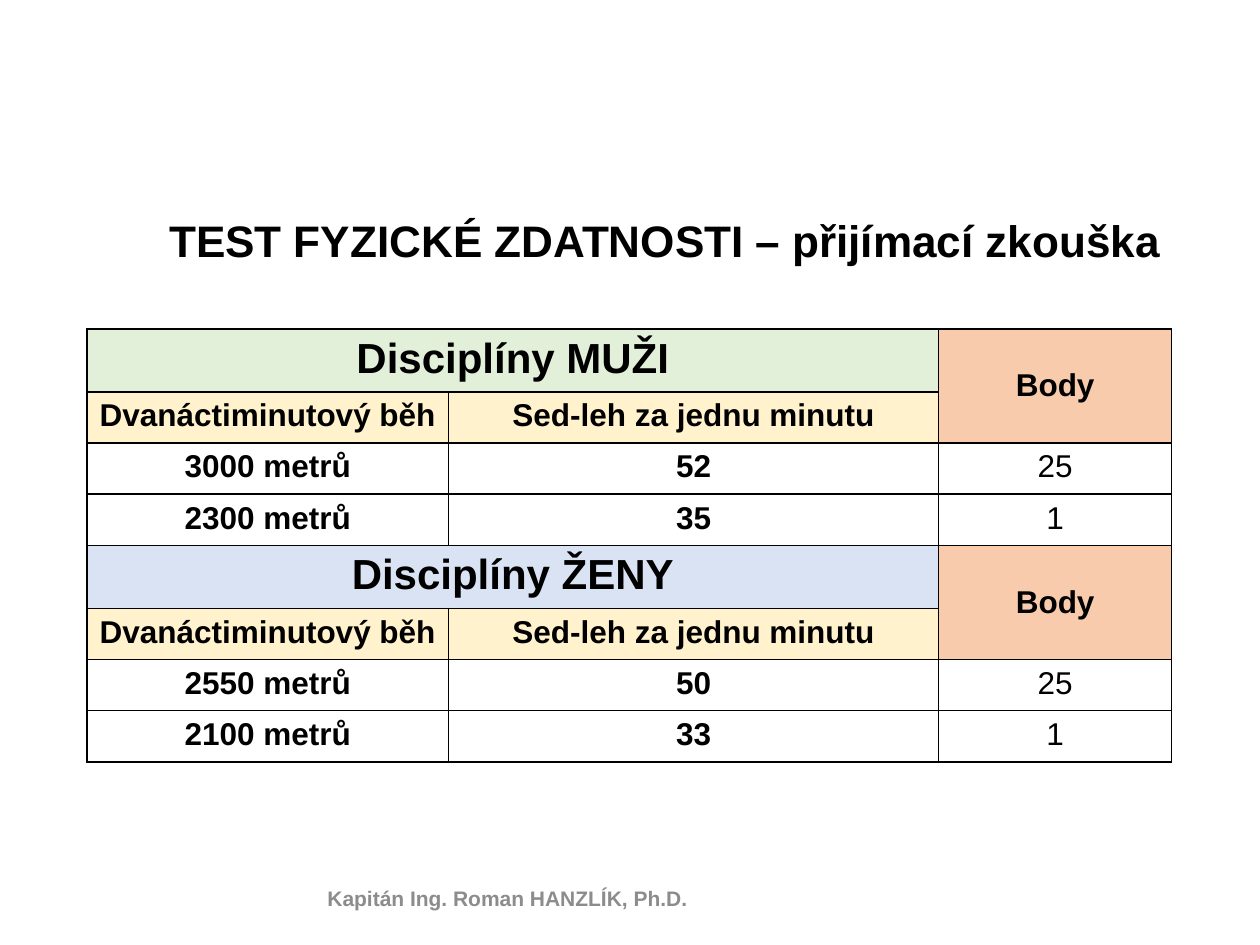
from dataclasses import dataclass

from lxml import etree
from pptx import Presentation
from pptx.dml.color import RGBColor
from pptx.enum import text
from pptx.oxml import ns
from pptx.util import Inches, Pt

WIDTH, HEIGHT = 10, 7.5
COLUMNS = (2.87, 3.89, 1.85)
ROW_HEIGHT = 3.25 / 8
BLACK, GREY, WHITE = "000000", "8C8C8C", "FFFFFF"
ORANGE, YELLOW, GREEN, BLUE = "F8CBAD", "FFF2CC", "E2F0D9", "DAE3F3"


@dataclass
class Label:
    wording: str
    left: float
    top: float
    width: float
    height: float
    size: float
    color: str
    align: text.PP_ALIGN


@dataclass
class Group:
    heading: str
    fill: str
    results: tuple


LABELS = (
    Label("TEST FYZICKÉ ZDATNOSTI – přijímací zkouška", 0.69, 1.46, 8.62, 0.88,
          25.2, BLACK, text.PP_ALIGN.RIGHT),
    Label("Kapitán Ing. Roman HANZLÍK, Ph.D.", 2.5, 6.93, 3.38, 0.4,
          12, GREY, text.PP_ALIGN.LEFT),
)
GROUPS = (
    Group("Disciplíny MUŽI", GREEN,
          (("3000 metrů", "52", "25"), ("2300 metrů", "35", "1"))),
    Group("Disciplíny ŽENY", BLUE,
          (("2550 metrů", "50", "25"), ("2100 metrů", "33", "1"))),
)
DISCIPLINES = ("Dvanáctiminutový běh", "Sed-leh za jednu minutu")


def rgb(color: str) -> RGBColor:
    return RGBColor.from_string(color)


def write(frame, wording: str, size: float, color: str,
          align: text.PP_ALIGN, bold: bool = True) -> None:
    paragraph = frame.paragraphs[0]
    paragraph.text = wording
    paragraph.alignment = align
    font = paragraph.font
    font.name, font.size, font.bold = "Arial", Pt(size), bold
    font.color.rgb = rgb(color)


def draw_label(slide, label: Label) -> None:
    box = slide.shapes.add_textbox(Inches(label.left), Inches(label.top),
                                   Inches(label.width), Inches(label.height))
    frame = box.text_frame
    frame.word_wrap = True
    frame.vertical_anchor = text.MSO_ANCHOR.MIDDLE
    write(frame, label.wording, label.size, label.color, label.align)


def add_borders(cell) -> None:
    properties = cell._tc.get_or_add_tcPr()
    for index, side in enumerate(("lnL", "lnR", "lnT", "lnB")):
        line = etree.Element(ns.qn(f"a:{side}"), w=str(Pt(1)))
        fill = etree.SubElement(line, ns.qn("a:solidFill"))
        etree.SubElement(fill, ns.qn("a:srgbClr"), val=BLACK)
        properties.insert(index, line)


def fill_cell(cell, wording: str, fill: str = WHITE, size: float = 18,
              bold: bool = True) -> None:
    cell.margin_left = cell.margin_right = Inches(0.05)
    cell.fill.solid()
    cell.fill.fore_color.rgb = rgb(fill)
    write(cell.text_frame, wording, size, BLACK, text.PP_ALIGN.CENTER, bold)


def draw_group(table, top: int, group: Group) -> None:
    heading, points = table.cell(top, 0), table.cell(top, 2)
    heading.merge(table.cell(top, 1))
    points.merge(table.cell(top + 1, 2))
    fill_cell(heading, group.heading, group.fill, 24)
    fill_cell(points, "Body", ORANGE)
    points.vertical_anchor = text.MSO_ANCHOR.MIDDLE
    for column, discipline in enumerate(DISCIPLINES):
        fill_cell(table.cell(top + 1, column), discipline, YELLOW)
    for row, result in enumerate(group.results, top + 2):
        for column, value in enumerate(result):
            fill_cell(table.cell(row, column), value, bold=column < 2)


def draw_table(slide) -> None:
    rows = sum(2 + len(group.results) for group in GROUPS)
    shape = slide.shapes.add_table(rows, len(COLUMNS), Inches(0.69), Inches(2.61),
                                   Inches(sum(COLUMNS)), Inches(rows * ROW_HEIGHT))
    table = shape.table
    table.first_row = table.horz_banding = False
    for column, width in zip(table.columns, COLUMNS):
        column.width = Inches(width)
    top = 0
    for group in GROUPS:
        draw_group(table, top, group)
        top += 2 + len(group.results)
    for cell in table.iter_cells():
        add_borders(cell)


def main() -> None:
    presentation = Presentation()
    presentation.slide_width = Inches(WIDTH)
    presentation.slide_height = Inches(HEIGHT)
    slide = presentation.slides.add_slide(presentation.slide_layouts[6])
    for label in LABELS:
        draw_label(slide, label)
    draw_table(slide)
    presentation.save("out.pptx")


if __name__ == "__main__":
    main()
